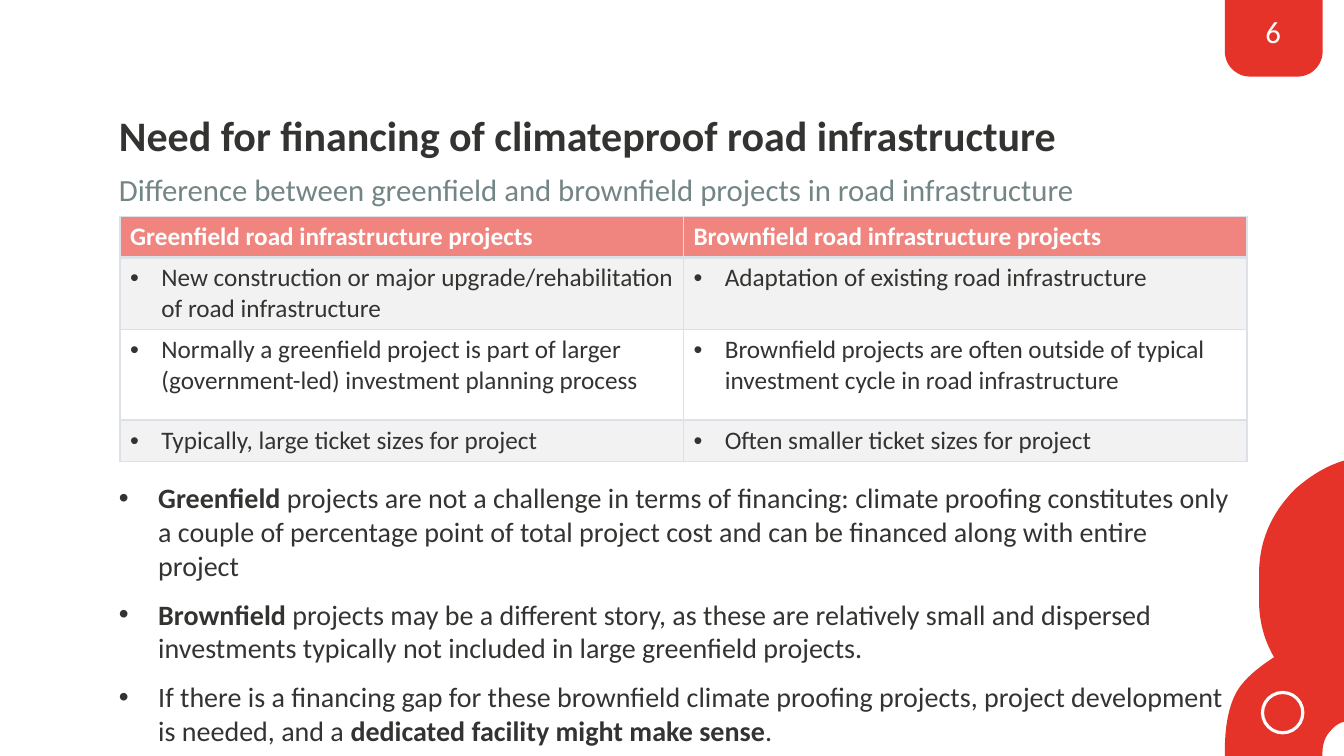
from pptx import Presentation
from pptx.dml.color import RGBColor
from pptx.enum.shapes import MSO_SHAPE as Shape
from pptx.enum.text import MSO_ANCHOR as Anchor, MSO_AUTO_SIZE as Auto, PP_ALIGN as Align
from pptx.oxml.ns import qn
from pptx.util import Inches, Pt
from lxml.etree import SubElement as Sub, Element


def hue(code):
    return RGBColor.from_string(code)


def fill_text(para, runs, size, code, dent=0):
    if dent:
        prop = para._p.get_or_add_pPr()
        prop.set("marL", str(Inches(dent)))
        prop.set("indent", str(-Inches(dent)))
        Sub(prop, qn("a:buFont")).set("typeface", "Arial")
        Sub(prop, qn("a:buChar")).set("char", "•")
    for words, bold in runs:
        run = para.add_run()
        run.text = words
        look = {"name": "Calibri", "size": Pt(size), "bold": bold}
        for key, val in look.items():
            setattr(run.font, key, val)
        run.font.color.rgb = hue(code)


RED, DARK, WHITE, EDGE = "E63329", "333332", "FFFFFF", "DBE1E6"

deck = Presentation()
deck.slide_width, deck.slide_height = Inches(13.33), Inches(7.5)
col, row = deck.slide_width / 100, deck.slide_height / 100
slide = deck.slides.add_slide(deck.slide_layouts[5])
shapes = slide.shapes

curves = [
    [(93.68, 79.47)],
    [(93.68, 82.13), (94.05, 84.67), (94.8, 86.93)],
    [(93.53, 88.4), (92.55, 89.87), (92.03, 91.47)],
    [(91.43, 93.33), (91.13, 96), (91.13, 99.47)],
    [(91.13, 100)],
    [(98.4, 100)],
    [(98.4, 99.47)],
    [(98.4, 98.4), (98.63, 97.33), (99, 96.67)],
    [(99.3, 96), (99.68, 95.6), (100, 95.47)],
    [(100, 60.93)],
    [(98.7, 61.6), (97.5, 62.93), (96.38, 64.67)],
    [(94.58, 67.87), (93.68, 71.6), (93.68, 75.87)],
]
last = (93.68, 75.87)
pen = shapes.build_freeform(int(last[0] * col), int(last[1] * row))
dots = []
for curve in curves:
    if len(curve) == 1:
        dots += curve
    else:
        one, two, end = curve
        for step in range(1, 13):
            t = step / 12
            u = 1 - t
            dots.append(tuple(
                u**3 * a + 3 * u * u * t * b + 3 * u * t * t * c + t**3 * d
                for a, b, c, d in zip(last, one, two, end)))
    last = curve[-1]
pen.add_line_segments([(int(x * col), int(y * row)) for x, y in dots])
blob = pen.convert_to_shape()

tab = shapes.add_shape(Shape.ROUND_2_SAME_RECTANGLE, int(91.13 * col), 0,
                       int(7.28 * col), int(10.13 * row))
tab.rotation = 180
tab.adjustments[0] = 0.33
for part in (blob, tab):
    part.shadow.inherit = False
    part.fill.solid()
    part.fill.fore_color.rgb = hue(RED)
    part.line.fill.background()

ring = shapes.add_shape(Shape.OVAL, int(93.94 * col), int(91.6 * row), Inches(0.4), Inches(0.4))
ring.shadow.inherit = False
ring.fill.background()
ring.line.color.rgb = hue(WHITE)
ring.line.width = Pt(2.25)

points = [
    [("Greenfield", True),
     (" projects are not a challenge in terms of financing: climate proofing constitutes only "
      "a couple of percentage point of total project cost and can be financed along with "
      "entire project", False)],
    [("Brownfield", True),
     (" projects may be a different story, as these are relatively small and dispersed "
      "investments typically not included in large greenfield projects.", False)],
    [("If there is a financing gap for these brownfield climate proofing projects, project "
      "development is needed, and a ", False),
     ("dedicated facility might make sense", True), (".", False)],
]
title = [[("Need for financing of climateproof road infrastructure", True)]]
topic = [[("Difference between greenfield and brownfield projects in road infrastructure", False)]]
texts = [
    ((8.85, 14.93, 82.05, 5.73), title, 30, DARK, 0, Align.LEFT, Anchor.MIDDLE),
    ((8.85, 22.53, 82.05, 5.73), topic, 22, "748585", 0, Align.LEFT, Anchor.TOP),
    ((8.85, 63.6, 83.03, 36), points, 20, DARK, 0.39, Align.LEFT, Anchor.TOP),
    ((92.78, 1.73, 3.9, 4.8), [[("6", False)]], 22, WHITE, 0, Align.CENTER, Anchor.TOP),
]
for (x, y, w, h), paras, size, code, dent, side, hold in texts:
    box = shapes.title if paras is title else shapes.add_textbox(0, 0, 0, 0)
    spot = {"left": x * col, "top": y * row, "width": w * col, "height": h * row}
    for key, val in spot.items():
        setattr(box, key, int(val))
    frame = box.text_frame
    look = {"word_wrap": True, "auto_size": Auto.NONE, "vertical_anchor": hold,
            "margin_left": 0, "margin_top": 0, "margin_right": 0, "margin_bottom": 0}
    for key, val in look.items():
        setattr(frame, key, val)
    for i, runs in enumerate(paras):
        para = frame.add_paragraph() if i else frame.paragraphs[0]
        para.alignment = side
        para.space_before = Pt(11 if i else 0)
        fill_text(para, runs, size, code, dent)

cells = [
    ("Greenfield road infrastructure projects", "Brownfield road infrastructure projects"),
    ("New construction or major upgrade/rehabilitation of road infrastructure",
     "Adaptation of existing road infrastructure"),
    ("Normally a greenfield project is part of larger (government-led) investment planning process",
     "Brownfield projects are often outside of typical investment cycle in road infrastructure"),
    ("Typically, large ticket sizes for project", "Often smaller ticket sizes for project"),
]
tall = [5.33, 9.47, 12, 5.47]
fills = ["F0857F", "F2F2F2", WHITE, "F2F2F2"]
table = shapes.add_table(4, 2, int(8.93 * col), int(28.67 * row),
                         int(83.85 * col), int(sum(tall) * row)).table
for r, pair in enumerate(cells):
    table.rows[r].height = int(tall[r] * row)
    for c, words in enumerate(pair):
        cell = table.cell(r, c)
        cell.fill.solid()
        cell.fill.fore_color.rgb = hue(fills[r])
        head = r == 0
        fill_text(cell.text_frame.paragraphs[0], [(words, head)], 18,
                  WHITE if head else DARK, 0 if head else 0.31)
        prop = cell._tc.get_or_add_tcPr()
        for i, side in enumerate("LRTB"):
            thick = (r, side) in [(0, "B"), (1, "T")]
            edge = Element(qn("a:ln" + side), w=str(Pt(3 if thick else 1)))
            Sub(Sub(edge, qn("a:solidFill")), qn("a:srgbClr")).set("val", EDGE)
            prop.insert(i, edge)

deck.save("out.pptx")
